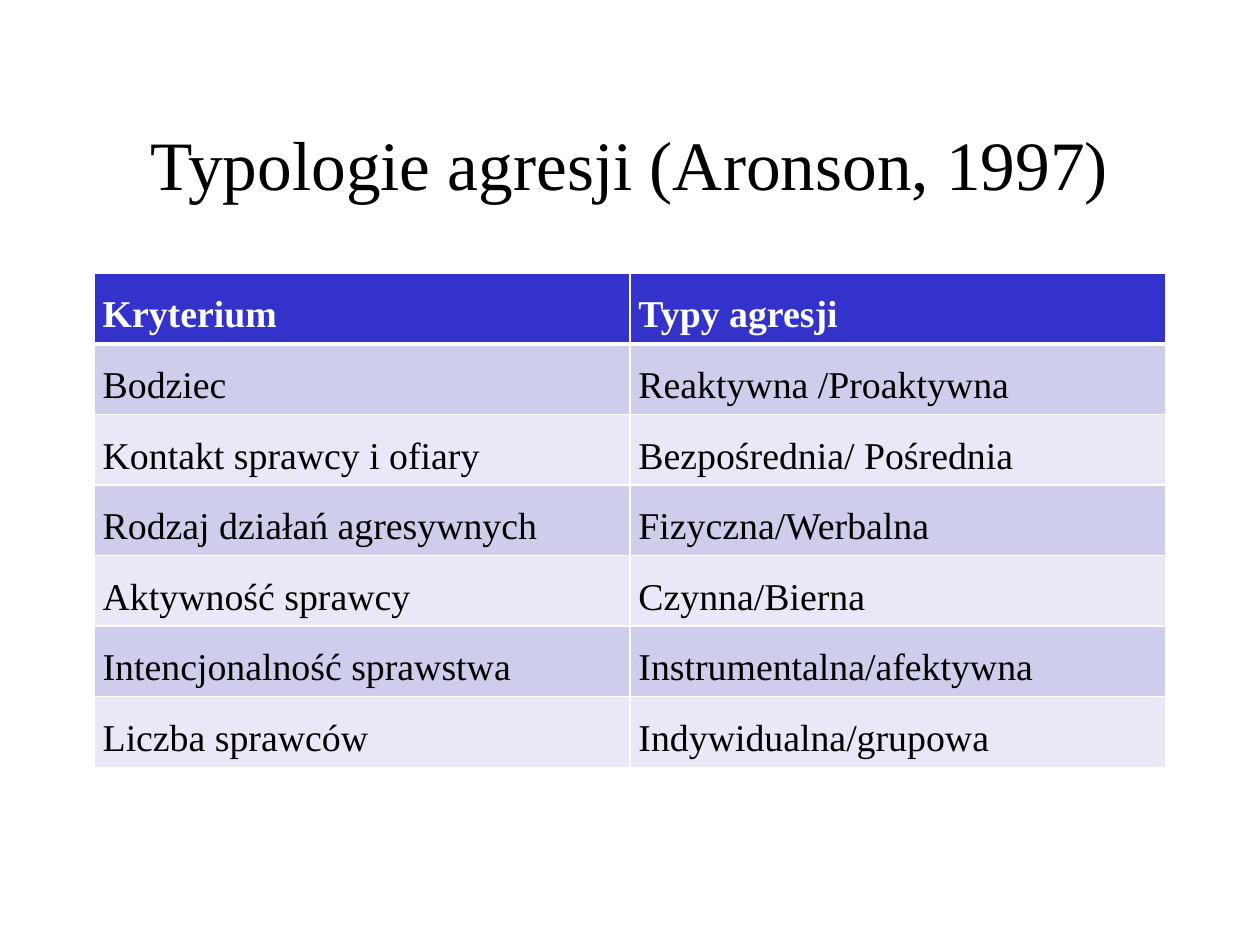
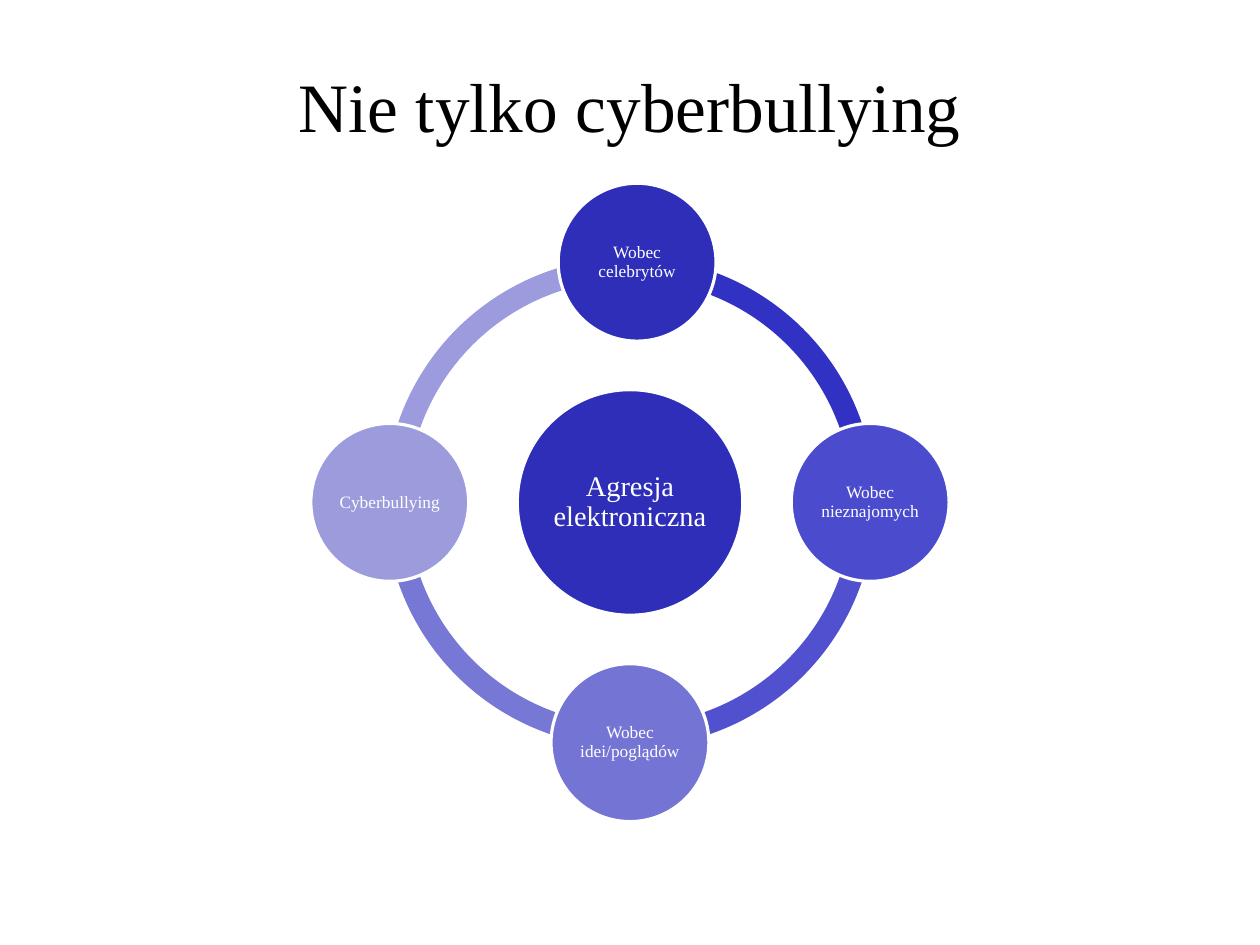
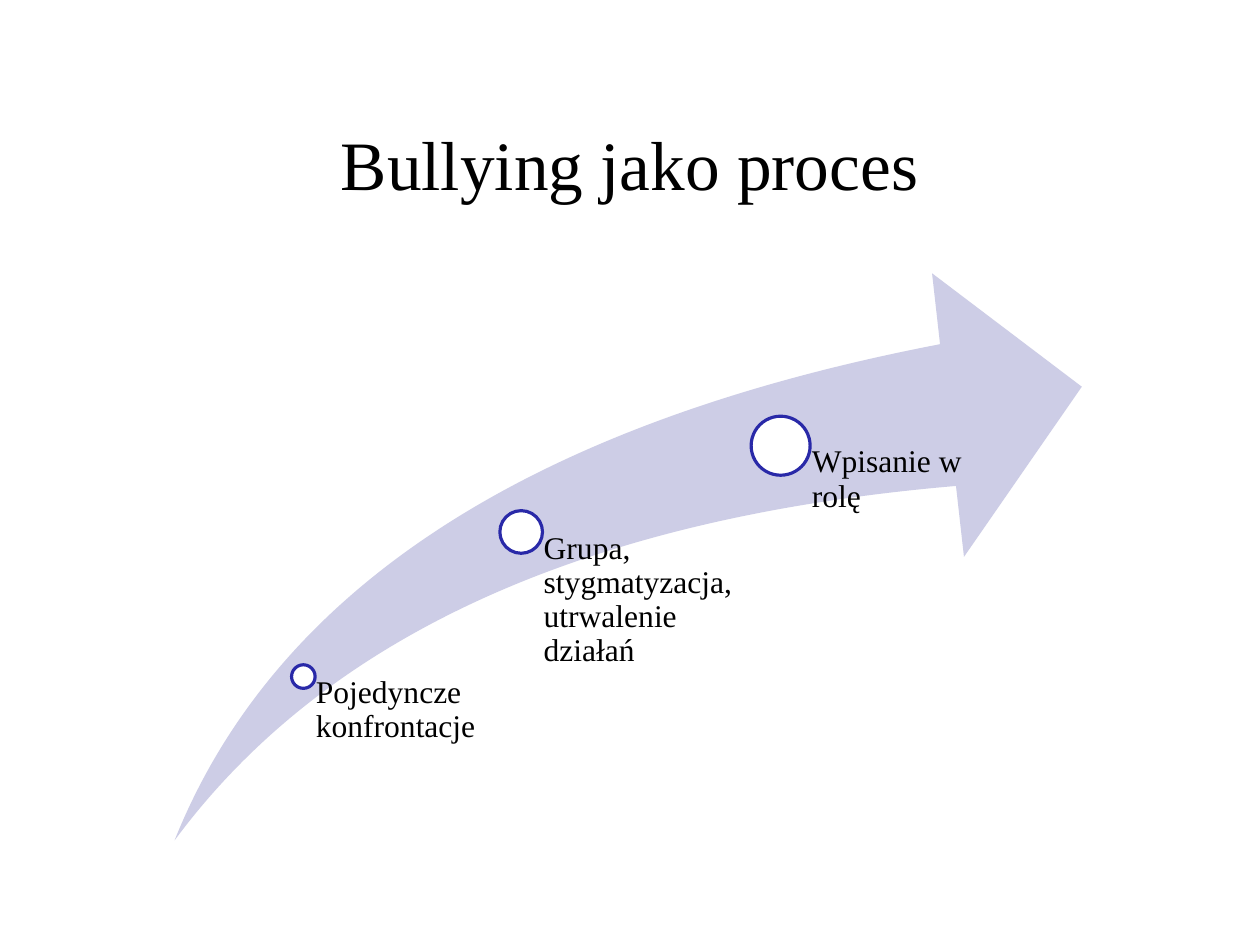
import math
from dataclasses import dataclass

import pptx
import pptx.dml.color
import pptx.enum.shapes
import pptx.enum.text
import pptx.oxml
import pptx.oxml.ns
import pptx.util

Cm = pptx.util.Cm
Pt = pptx.util.Pt
SHAPE = pptx.enum.shapes.MSO_SHAPE
ALIGN = pptx.enum.text.PP_ALIGN
ANCHOR = pptx.enum.text.MSO_ANCHOR


@dataclass(frozen=True)
class Theme:
    font: str = "Times New Roman"
    text: str = "000000"
    white: str = "FFFFFF"
    header: str = "3333CC"
    row_bands: tuple = ("CECEEC", "E8E8F6")
    hub: str = "2E2EB9"
    swoosh: str = "CDCDE6"
    dot_outline: str = "2929A8"
    title_size: int = 44
    table_size: int = 24
    step_size: int = 20
    hub_size: int = 18
    node_size: int = 11
    outline_width: int = 2


@dataclass(frozen=True)
class Box:
    """A region of the slide, in centimetres."""
    left: float
    top: float
    width: float
    height: float

    def place(self):
        return Cm(self.left), Cm(self.top), Cm(self.width), Cm(self.height)

    def centre(self):
        return self.left + self.width / 2, self.top + self.height / 2


THEME = Theme()
SLIDE_WIDTH, SLIDE_HEIGHT = 28.22, 21.16
MARGIN = 2.11
CONTENT_WIDTH = SLIDE_WIDTH - 2 * MARGIN
TITLE_HEIGHT = 3.53
TITLE_TOP, RAISED_TITLE_TOP = 1.88, 0.58

AGGRESSION_TYPES = [
    ("Kryterium", "Typy agresji"),
    ("Bodziec", "Reaktywna /Proaktywna"),
    ("Kontakt sprawcy i ofiary", "Bezpośrednia/ Pośrednia"),
    ("Rodzaj działań agresywnych", "Fizyczna/Werbalna"),
    ("Aktywność sprawcy", "Czynna/Bierna"),
    ("Intencjonalność sprawstwa", "Instrumentalna/afektywna"),
    ("Liczba sprawców", "Indywidualna/grupowa"),
]
# Target, angle on the ring in degrees, node colour, colour of the arc that follows
TARGETS = [
    ("Wobec celebrytów", 271.7, "2E2EB9", "3131C3"),
    ("Wobec nieznajomych", 0, "4B4BCD", "5151CF"),
    ("Wobec idei/poglądów", 90, "7474D4", "7777D5"),
    ("Cyberbullying", 180, "9C9CDD", "9B9BDD"),
]
# Step, then shares of the arrow box: dot centre x and y, dot size, label width
STEPS = [
    ("Pojedyncze konfrontacje", 0.142, 0.711, 0.026, 0.233),
    ("Grupa, stygmatyzacja, utrwalenie działań", 0.382, 0.456, 0.047, 0.24),
    ("Wpisanie w rolę", 0.668, 0.304, 0.065, 0.24),
]


def rgb(colour):
    return pptx.dml.color.RGBColor.from_string(colour)


def write(frame, words, size, colour, align=ALIGN.LEFT, spacing=None, bold=False):
    paragraph = frame.paragraphs[0]
    paragraph.alignment = align
    paragraph.line_spacing = spacing
    run = paragraph.add_run()
    run.text = words
    run.font.name = THEME.font
    run.font.size = Pt(size)
    run.font.bold = bold
    run.font.color.rgb = rgb(colour)


def set_insets(frame, left=0, top=0, right=0, bottom=0):
    frame.margin_left, frame.margin_right = Cm(left), Cm(right)
    frame.margin_top, frame.margin_bottom = Cm(top), Cm(bottom)


def add_figure(slide, preset, box, fill, outline=None):
    figure = slide.shapes.add_shape(preset, *box.place())
    figure.shadow.inherit = False
    figure.fill.solid()
    figure.fill.fore_color.rgb = rgb(fill)
    if outline:
        figure.line.color.rgb = rgb(outline)
        figure.line.width = Pt(THEME.outline_width)
    else:
        figure.line.fill.background()
    return figure


def add_circle(slide, x, y, diameter, fill, outline):
    box = Box(x - diameter / 2, y - diameter / 2, diameter, diameter)
    return add_figure(slide, SHAPE.OVAL, box, fill, outline)


def titled_slide(deck, words, top=TITLE_TOP):
    slide = deck.slides.add_slide(deck.slide_layouts[5])
    title = slide.shapes.title
    title.left, title.top, title.width, title.height = Box(
        MARGIN, top, CONTENT_WIDTH, TITLE_HEIGHT).place()
    title.text_frame.vertical_anchor = ANCHOR.MIDDLE
    write(title.text_frame, words, THEME.title_size, THEME.text, ALIGN.CENTER)
    return slide


def set_borders(cell, **widths):
    """Draw white cell borders; widths in points are keyed L, R, T and B."""
    properties = cell._tc.get_or_add_tcPr()
    for position, (side, width) in enumerate(widths.items()):
        properties.insert(position, pptx.oxml.parse_xml(
            f'<a:ln{side} {pptx.oxml.ns.nsdecls("a")} w="{Pt(width)}"><a:solidFill>'
            f'<a:srgbClr val="{THEME.white}"/></a:solidFill></a:ln{side}>'))


def add_type_table(slide, box):
    columns = len(AGGRESSION_TYPES[0])
    table = slide.shapes.add_table(len(AGGRESSION_TYPES), columns, *box.place()).table
    for column in table.columns:
        column.width = Cm(box.width / columns)
    for row in table.rows:
        row.height = Cm(box.height / len(AGGRESSION_TYPES))
    for r, entries in enumerate(AGGRESSION_TYPES):
        heading = r == 0
        for c, words in enumerate(entries):
            cell = table.cell(r, c)
            set_insets(cell, left=0.19, right=0.19)
            cell.fill.solid()
            cell.fill.fore_color.rgb = rgb(
                THEME.header if heading else THEME.row_bands[(r - 1) % 2])
            set_borders(cell, L=1, R=1, T=3 if r == 1 else 1, B=3 if heading else 1)
            write(cell.text_frame, words, THEME.table_size,
                  THEME.white if heading else THEME.text, spacing=1.5, bold=heading)


def add_ring_node(slide, words, x, y, diameter, fill, size):
    node = add_circle(slide, x, y, diameter, fill, THEME.white)
    frame = node.text_frame
    frame.word_wrap = True
    frame.vertical_anchor = ANCHOR.MIDDLE
    set_insets(frame, 0.05, 0.05, 0.05, 0.05)
    write(frame, words, size, THEME.white, ALIGN.CENTER, 0.9)


def add_target_ring(slide, box):
    x, y = box.centre()
    orbit = box.width * 0.49
    # Arcs, each from one node to the next
    for i, (_, angle, _, arc_colour) in enumerate(TARGETS):
        next_angle = TARGETS[(i + 1) % len(TARGETS)][1]
        arc = add_figure(slide, SHAPE.BLOCK_ARC, box, arc_colour)
        arc.adjustments[0] = angle * 0.6
        arc.adjustments[1] = next_angle * 0.6
        arc.adjustments[2] = 0.046
    # Hub and nodes
    add_ring_node(slide, "Agresja elektroniczna", x, y, box.width * 0.46,
                  THEME.hub, THEME.hub_size)
    for words, angle, colour, _ in TARGETS:
        turn = math.radians(angle)
        add_ring_node(slide, words, x + orbit * math.cos(turn), y + orbit * math.sin(turn),
                      box.width * 0.322, colour, THEME.node_size)


def add_step_arrow(slide, box):
    arrow = add_figure(slide, SHAPE.SWOOSH_ARROW, box, THEME.swoosh)
    arrow.adjustments[0] = arrow.adjustments[1] = 0.25
    for words, x_share, y_share, dot_share, label_share in STEPS:
        x = box.left + box.width * x_share
        y = box.top + box.height * y_share
        dot = box.width * dot_share
        add_circle(slide, x, y, dot, THEME.white, THEME.dot_outline)
        # Label hangs from the dot's centre down to the foot of the arrow
        label_box = Box(x, y, box.width * label_share, box.top + box.height - y)
        label = slide.shapes.add_textbox(*label_box.place()).text_frame
        label.word_wrap = True
        set_insets(label, left=dot * 0.53)
        write(label, words, THEME.step_size, THEME.text, spacing=0.9)


def main():
    deck = pptx.Presentation()
    deck.slide_width, deck.slide_height = Cm(SLIDE_WIDTH), Cm(SLIDE_HEIGHT)

    typology = titled_slide(deck, "Typologie agresji (Aronson, 1997)")
    add_type_table(typology, Box(MARGIN, 6.12, CONTENT_WIDTH, 11.06))

    targets = titled_slide(deck, "Nie tylko cyberbullying", RAISED_TITLE_TOP)
    add_target_ring(targets, Box(8.62, 5.76, 10.98, 10.98))

    process = titled_slide(deck, "Bullying jako proces")
    add_step_arrow(process, Box(3.91, 6.12, 20.32, 12.7))

    deck.save("out.pptx")


if __name__ == "__main__":
    main()
